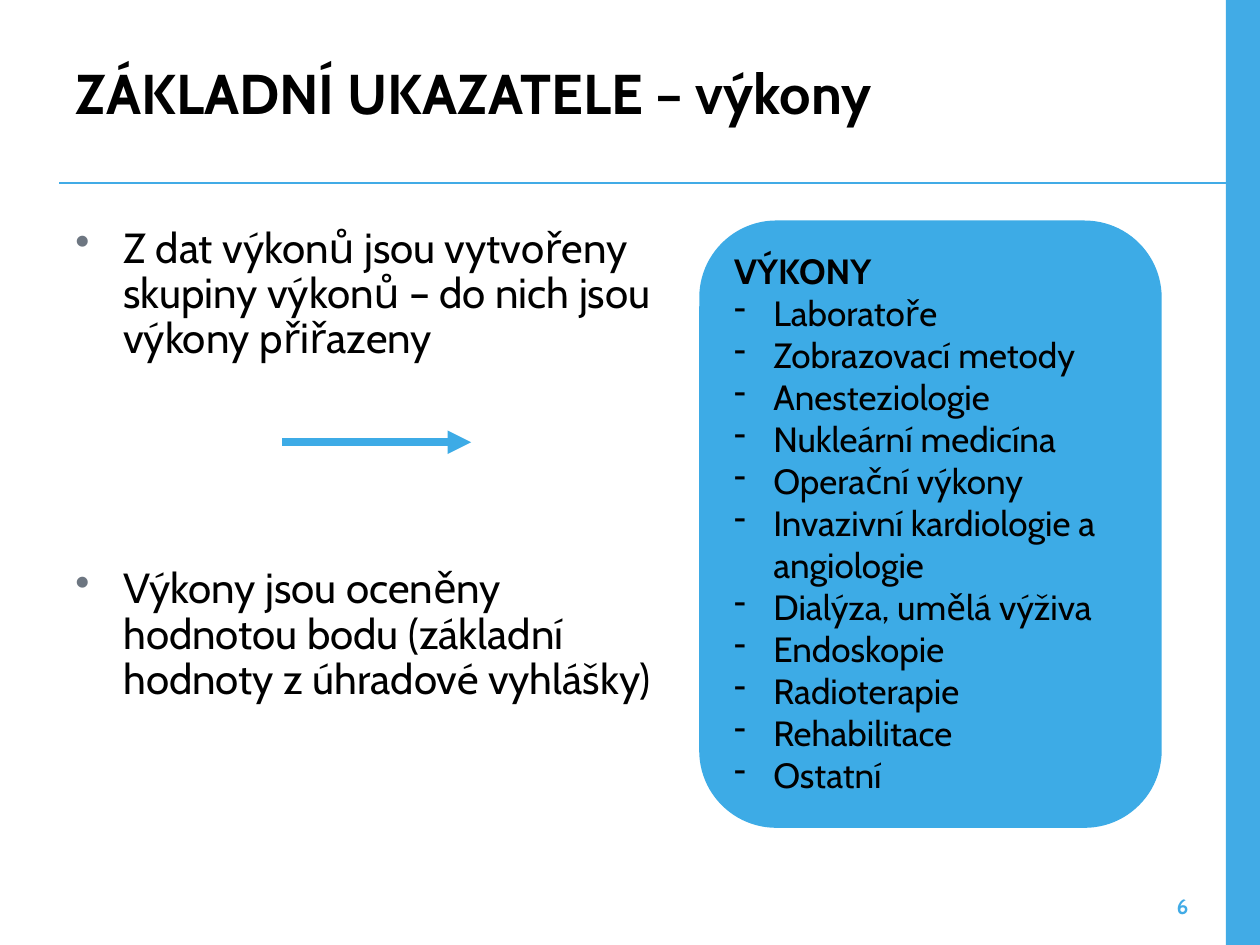
from pptx import Presentation
from pptx.dml.color import RGBColor
from pptx.enum import shapes, text
from pptx.oxml import parse_xml
from pptx.oxml.ns import nsdecls
from pptx.util import Inches, Pt

TITLE = "ZÁKLADNÍ UKAZATELE – výkony"
POINTS = [
    "Z dat výkonů jsou vytvořeny skupiny výkonů – do nich jsou výkony přiřazeny",
    "Výkony jsou oceněny hodnotou bodu (základní hodnoty z úhradové vyhlášky)",
]
GROUPS_HEADING = "VÝKONY"
GROUPS = [
    "Laboratoře",
    "Zobrazovací metody",
    "Anesteziologie",
    "Nukleární medicína",
    "Operační výkony",
    "Invazivní kardiologie a angiologie",
    "Dialýza, umělá výživa",
    "Endoskopie",
    "Radioterapie",
    "Rehabilitace",
    "Ostatní",
]
PAGE_NUMBER = "6"

FONT = "Cabin"
BLACK = RGBColor(0x00, 0x00, 0x00)
EDGE_BLUE = RGBColor(0x41, 0xAB, 0xE6)
PANEL_BLUE = RGBColor(0x3D, 0xAB, 0xE6)
BULLET_GREY = RGBColor(0x6D, 0x76, 0x81)
POINT_GAP = Pt(117)


def inches(*lengths):
    return [Inches(length) for length in lengths]


def style(paragraph, size, color=BLACK, bold=False):
    for run in paragraph.runs:
        run.font.name = FONT
        run.font.size = Pt(size)
        run.font.bold = bold
        run.font.color.rgb = color


def add_bullet(paragraph, char, indent, color=None):
    """Give the paragraph a bullet character with a hanging indent."""
    properties = paragraph._p.get_or_add_pPr()
    properties.set("marL", str(Inches(indent)))
    properties.set("indent", str(-Inches(indent)))
    if color is not None:
        properties.append(parse_xml(
            f'<a:buClr {nsdecls("a")}><a:srgbClr val="{color}"/></a:buClr>'))
    properties.append(parse_xml(f'<a:buChar {nsdecls("a")} char="{char}"/>'))


def add_panel(slide, preset, box, color):
    panel = slide.shapes.add_shape(preset, *inches(*box))
    panel.shadow.inherit = False
    panel.fill.solid()
    panel.fill.fore_color.rgb = color
    panel.line.fill.background()
    return panel


def add_line(slide, ends, color, width):
    line = slide.shapes.add_connector(shapes.MSO_CONNECTOR.STRAIGHT, *inches(*ends))
    line.line.color.rgb = color
    line.line.width = Pt(width)
    line._element.spPr.append(parse_xml(f'<a:effectLst {nsdecls("a")}/>'))
    return line


def add_text_box(slide, box, anchor):
    frame = slide.shapes.add_textbox(*inches(*box)).text_frame
    frame.word_wrap = True
    frame.vertical_anchor = anchor
    return frame


def add_title(slide):
    title = slide.shapes.title
    title.left, title.top, title.width, title.height = inches(0.5, 0.3, 9, 0.93)
    frame = title.text_frame
    frame.text = TITLE
    frame.vertical_anchor = text.MSO_ANCHOR.MIDDLE
    heading = frame.paragraphs[0]
    heading.alignment = text.PP_ALIGN.LEFT
    heading.line_spacing = 0.9
    style(heading, 32, bold=True)


def add_points(slide):
    frame = add_text_box(slide, (0.5, 1.75, 4.81, 4.28), text.MSO_ANCHOR.TOP)
    frame.text = "\n".join(POINTS)
    for index, point in enumerate(frame.paragraphs):
        point.line_spacing = 0.9
        if index:
            point.space_before = POINT_GAP
        add_bullet(point, "•", 0.38, BULLET_GREY)
        style(point, 24)


def add_groups(slide):
    panel = add_panel(slide, shapes.MSO_SHAPE.ROUNDED_RECTANGLE,
                      (5.55, 1.75, 3.67, 4.82), PANEL_BLUE)
    frame = panel.text_frame
    frame.word_wrap = True
    frame.vertical_anchor = text.MSO_ANCHOR.TOP
    frame.text = "\n".join([GROUPS_HEADING] + GROUPS)
    for index, group in enumerate(frame.paragraphs):
        group.alignment = text.PP_ALIGN.LEFT
        if index:
            add_bullet(group, "-", 0.31)
        style(group, 20, bold=index == 0)


def add_page_number(slide):
    frame = add_text_box(slide, (8.43, 6.95, 1.1, 0.39), text.MSO_ANCHOR.BOTTOM)
    frame.text = PAGE_NUMBER
    number = frame.paragraphs[0]
    number.alignment = text.PP_ALIGN.RIGHT
    style(number, 12, EDGE_BLUE, bold=True)


def main():
    deck = Presentation()
    deck.slide_width, deck.slide_height = inches(10, 7.5)
    slide = deck.slides.add_slide(deck.slide_layouts[5])

    add_panel(slide, shapes.MSO_SHAPE.RECTANGLE, (9.73, 0, 0.27, 7.5), EDGE_BLUE)
    add_line(slide, (0.47, 1.45, 9.76, 1.45), EDGE_BLUE, 1)
    add_page_number(slide)
    add_groups(slide)
    add_title(slide)
    add_points(slide)
    arrow = add_line(slide, (2.24, 3.51, 3.74, 3.51), PANEL_BLUE, 4.5)
    arrow.line._get_or_add_ln().append(
        parse_xml(f'<a:tailEnd {nsdecls("a")} type="triangle"/>'))

    deck.save("out.pptx")


if __name__ == "__main__":
    main()
